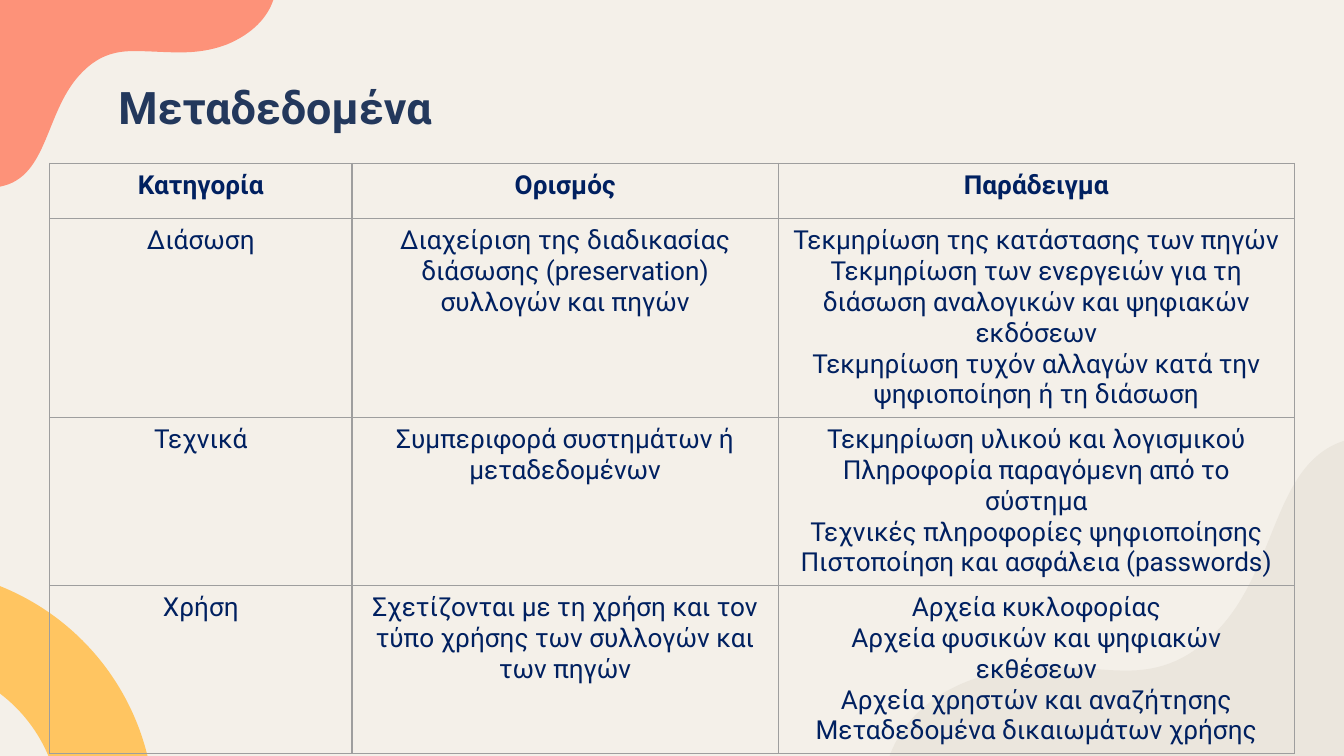
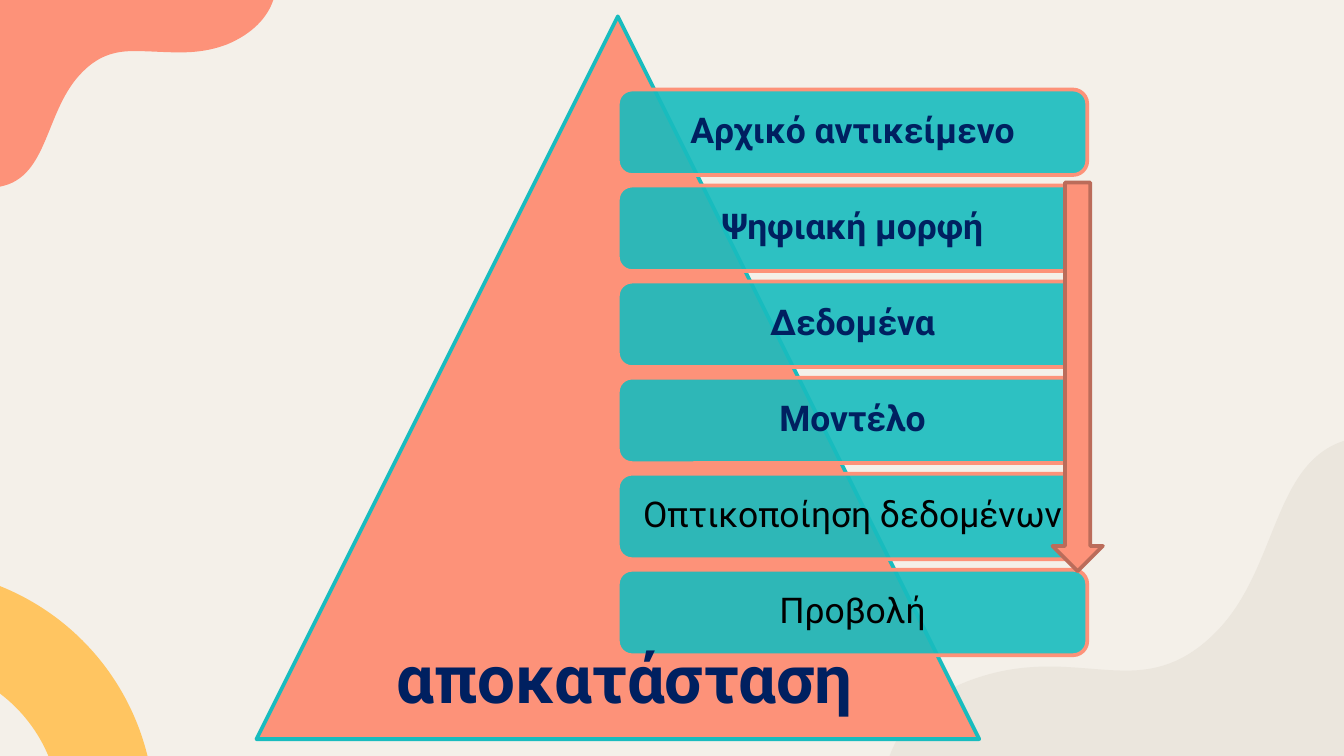
from itertools import chain

from lxml.etree import SubElement
from pptx import Presentation
from pptx.dml.color import RGBColor
from pptx.enum.shapes import MSO_SHAPE as Shape
from pptx.enum.text import MSO_ANCHOR as Anchor, MSO_AUTO_SIZE as AutoSize, PP_ALIGN as Align
from pptx.oxml.ns import qn
from pptx.util import Pt

FONT = "Roboto"
CREAM = RGBColor(0xF4, 0xF0, 0xE9)
CORAL = RGBColor(0xFD, 0x92, 0x79)
DARK_CORAL = RGBColor(0xBB, 0x6C, 0x5A)
YELLOW = RGBColor(0xFF, 0xC5, 0x61)
SAND = RGBColor(0xEB, 0xE6, 0xDD)
TEAL = RGBColor(0x18, 0xBC, 0xBE)
SLATE = RGBColor(0x23, 0x38, 0x5C)
NAVY = RGBColor(0x00, 0x20, 0x60)
BLACK = RGBColor(0x00, 0x00, 0x00)
GREY = RGBColor(0x9E, 0x9E, 0x9E)

TITLE = "Μεταδεδομένα"
HEADINGS = ("Κατηγορία", "Ορισμός", "Παράδειγμα")
METADATA = [
    ("Διάσωση",
     "Διαχείριση της διαδικασίας διάσωσης (preservation) συλλογών και πηγών",
     "Τεκμηρίωση της κατάστασης των πηγών\n"
     "Τεκμηρίωση των ενεργειών για τη διάσωση αναλογικών και ψηφιακών εκδόσεων\n"
     "Τεκμηρίωση τυχόν αλλαγών κατά την ψηφιοποίηση ή τη διάσωση"),
    ("Τεχνικά",
     "Συμπεριφορά συστημάτων ή μεταδεδομένων",
     "Τεκμηρίωση υλικού και λογισμικού\n"
     "Πληροφορία παραγόμενη από το σύστημα\n"
     "Τεχνικές πληροφορίες ψηφιοποίησης\n"
     "Πιστοποίηση και ασφάλεια (passwords)"),
    ("Χρήση",
     "Σχετίζονται με τη χρήση και τον τύπο χρήσης των συλλογών και των πηγών",
     "Αρχεία κυκλοφορίας\n"
     "Αρχεία φυσικών και ψηφιακών εκθέσεων\n"
     "Αρχεία χρηστών και αναζήτησης\n"
     "Μεταδεδομένα δικαιωμάτων χρήσης"),
]
COLUMN_WIDTHS = (162, 228.4, 276.5)
ROW_HEIGHT = 29.5

# Label, colour, bold
STAGES = [
    ("Αρχικό αντικείμενο", NAVY, True),
    ("Ψηφιακή μορφή", NAVY, True),
    ("Δεδομένα", NAVY, True),
    ("Μοντέλο", NAVY, True),
    ("Οπτικοποίηση δεδομένων", BLACK, False),
    ("Προβολή", BLACK, False),
]
STAGE_TOP, STAGE_PITCH, STAGE_HEIGHT = 48, 51.45, 45.8
PYRAMID_LABEL = "αποκατάσταση"

# Each blob: start point, Bézier curves (two controls and an end), closing corner
TOP_BLOB = (
    (0, 100),
    [((26.6, 95), (23.8, 58.3), (44.6, 38.2)),
     ((54, 28.8), (63.4, 27.4), (72, 27.4)),
     ((79.9, 27.4), (87.8, 28.1), (96.5, 28.1)),
     ((103.7, 28.1), (112.3, 27.4), (121.7, 23.8)),
     ((135.4, 18), (143.3, 9.4), (146.4, 0))],
    (0, 0))
BOTTOM_BLOB = (
    (725.8, 234.7),
    [((680.4, 243.4), (686.2, 306), (649.4, 340.6)),
     ((633.6, 355.7), (618.5, 359.3), (603.4, 359.3)),
     ((590.4, 359.3), (576.7, 357.1), (562.3, 357.1)),
     ((549.4, 357.1), (535, 358.6), (518.4, 365)),
     ((496.1, 373.7), (482.4, 388.8), (476.6, 405))],
    (725.8, 405))


def write(frame, text, size, color, bold=False, align=Align.LEFT, spacing=None):
    """Fill a text frame, one paragraph per line of text."""
    for index, line in enumerate(text.split("\n")):
        para = frame.add_paragraph() if index else frame.paragraphs[0]
        para.alignment = align
        if spacing:
            para.line_spacing = spacing
        span = para.add_run()
        span.text = line
        font = span.font
        font.name, font.size, font.bold = FONT, Pt(size), bold
        font.color.rgb = color


def set_margins(frame, points):
    frame.margin_left = frame.margin_right = Pt(points)
    frame.margin_top = frame.margin_bottom = Pt(points)


def paint(shape, fill, line=None):
    shape.shadow.inherit = False
    shape.fill.solid()
    shape.fill.fore_color.rgb = fill
    if line is None:
        shape.line.fill.background()
    else:
        shape.line.color.rgb = line
        shape.line.width = Pt(2)


def add_preset(slide, kind, left, top, width, height, fill, line=None):
    shape = slide.shapes.add_shape(kind, Pt(left), Pt(top), Pt(width), Pt(height))
    paint(shape, fill, line)
    return shape


def set_opacity(shape, percent):
    color = shape.fill._xPr.find(qn("a:solidFill"))[0]
    SubElement(color, qn("a:alpha"), val=str(percent * 1000))


def add_blob(slide, blob, color):
    """Draw the curve points as a polygon, then merge each three lines into a curve."""
    start, curves, corner = blob
    first, *rest = [(Pt(x), Pt(y)) for x, y in (start, *chain(*curves), corner)]
    builder = slide.shapes.build_freeform(*first)
    builder.add_line_segments(rest, close=True)
    shape = builder.convert_to_shape()
    lines = list(shape._element.iter(qn("a:lnTo")))
    for index in range(0, 3 * len(curves), 3):
        trio = lines[index:index + 3]
        curve = trio[0].makeelement(qn("a:cubicBezTo"), {})
        trio[0].addprevious(curve)
        for line in trio:
            curve.append(line[0])
            line.getparent().remove(line)
    paint(shape, color)


def add_slide(deck, layout_name):
    """Add a slide with the shared decoration behind its content."""
    slide = deck.slides.add_slide(deck.slide_layouts.get_by_name(layout_name))
    add_blob(slide, TOP_BLOB, CORAL)
    arc = add_preset(slide, Shape.BLOCK_ARC, -180.7, 304.6, 263.5, 263.5, YELLOW)
    arc.rotation = 60
    for index, value in enumerate((108, 15.135, 0.192)):
        arc.adjustments[index] = value
    add_blob(slide, BOTTOM_BLOB, SAND)
    return slide


def add_title(slide, text):
    title = slide.shapes.title
    title.left, title.top, title.width, title.height = Pt(56.2), Pt(35.3), Pt(534), Pt(45.4)
    frame = title.text_frame
    frame.auto_size = AutoSize.NONE
    frame.vertical_anchor = Anchor.TOP
    set_margins(frame, 7.2)
    write(frame, text, 24, SLATE, bold=True)


def border_cell(cell):
    properties = cell._tc.get_or_add_tcPr()
    for index, side in enumerate(("lnL", "lnR", "lnT", "lnB")):
        line = properties.makeelement(qn(f"a:{side}"), {"w": str(Pt(0.75))})
        fill = SubElement(line, qn("a:solidFill"))
        SubElement(fill, qn("a:srgbClr"), val=str(GREY))
        properties.insert(index, line)


def add_metadata_table(slide):
    rows = [HEADINGS, *METADATA]
    table = slide.shapes.add_table(
        len(rows), len(HEADINGS), Pt(26.6), Pt(87.5),
        Pt(sum(COLUMN_WIDTHS)), Pt(ROW_HEIGHT * len(rows))).table
    table.first_row = table.horz_banding = False
    for column, width in zip(table.columns, COLUMN_WIDTHS):
        column.width = Pt(width)
    for row_index, texts in enumerate(rows):
        table.rows[row_index].height = Pt(ROW_HEIGHT)
        for column_index, text in enumerate(texts):
            cell = table.cell(row_index, column_index)
            cell.fill.background()
            border_cell(cell)
            write(cell.text_frame, text, 14, NAVY, bold=row_index == 0, align=Align.CENTER)


def add_stage(slide, index, label, color, bold):
    box = add_preset(slide, Shape.ROUNDED_RECTANGLE, 331, STAGE_TOP + index * STAGE_PITCH,
                     251.5, STAGE_HEIGHT, TEAL, CORAL)
    set_opacity(box, 90)
    frame = box.text_frame
    frame.word_wrap = True
    frame.vertical_anchor = Anchor.MIDDLE
    set_margins(frame, 5.7)
    write(frame, label, 19, color, bold=bold, align=Align.CENTER, spacing=0.9)


def build_metadata_slide(deck):
    slide = add_slide(deck, "Title Only")
    add_title(slide, TITLE)
    add_metadata_table(slide)


def build_pyramid_slide(deck):
    slide = add_slide(deck, "Blank")
    add_preset(slide, Shape.ISOSCELES_TRIANGLE, 137.4, 8.8, 387.2, 387.2, CORAL, TEAL)
    for index, stage in enumerate(STAGES):
        add_stage(slide, index, *stage)
    add_preset(slide, Shape.DOWN_ARROW, 563.8, 97.8, 27, 208.2, CORAL, DARK_CORAL)
    label = slide.shapes.add_textbox(Pt(205.2), Pt(337.2), Pt(273.6), Pt(51))
    label.text_frame.word_wrap = False
    label.text_frame.auto_size = AutoSize.SHAPE_TO_FIT_TEXT
    write(label.text_frame, PYRAMID_LABEL, 36, NAVY, bold=True)


def main():
    deck = Presentation()
    deck.slide_width, deck.slide_height = Pt(720), Pt(405)
    background = deck.slide_master.background.fill
    background.solid()
    background.fore_color.rgb = CREAM
    build_metadata_slide(deck)
    build_pyramid_slide(deck)
    deck.save("out.pptx")


if __name__ == "__main__":
    main()
